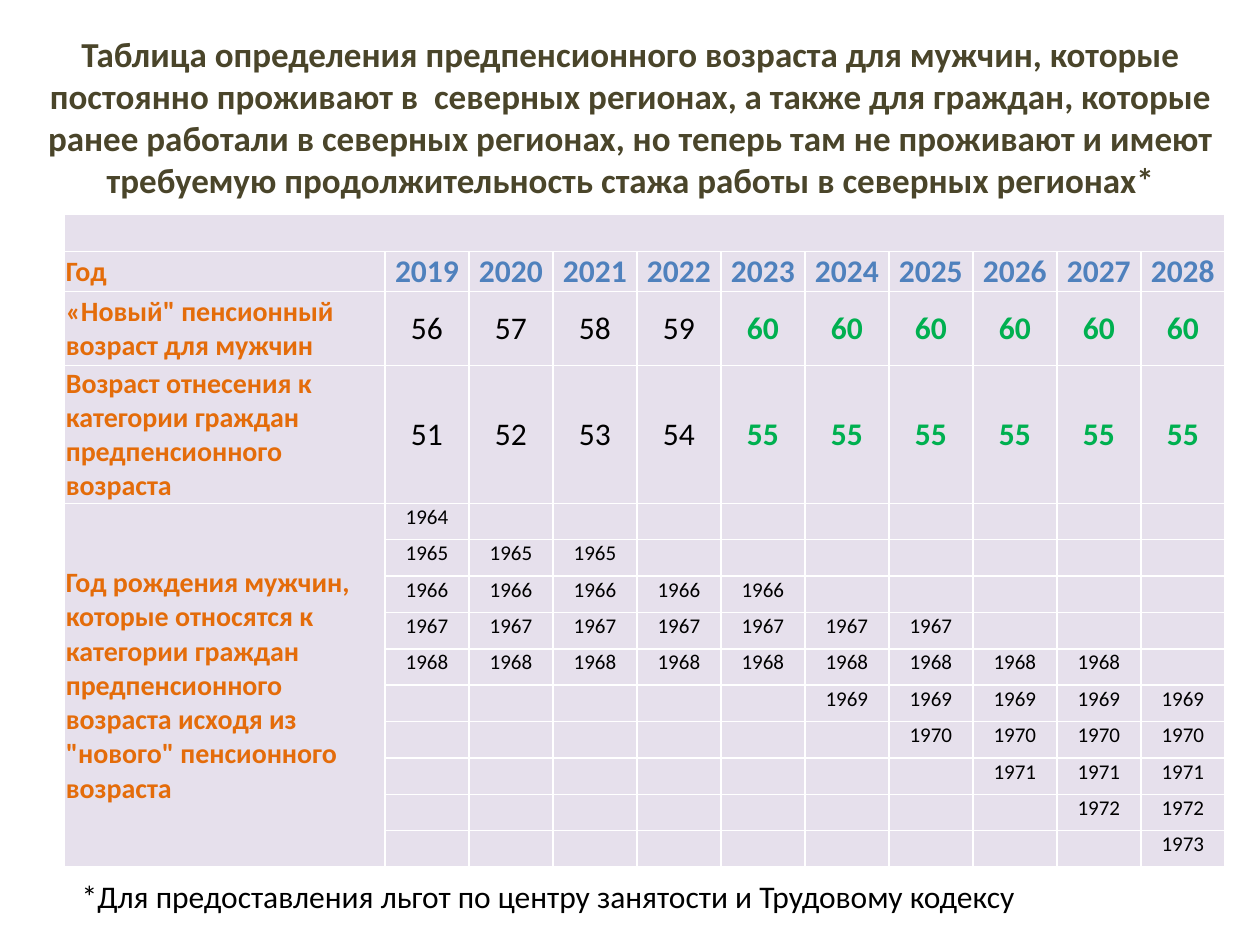
from lxml.etree import SubElement
from pptx import Presentation
from pptx.dml.color import RGBColor as Rgb
from pptx.enum.text import MSO_ANCHOR as Anchor, PP_ALIGN as Align
from pptx.oxml.ns import qn
from pptx.util import Pt

# Content
TITLE = (
    "Таблица определения предпенсионного возраста для мужчин, которые "
    "постоянно проживают в  северных регионах, а также для граждан, которые "
    "ранее работали в северных регионах, но теперь там не проживают и имеют "
    "требуемую продолжительность стажа работы в северных регионах*"
)
FOOTNOTE = "*Для предоставления льгот по центру занятости и Трудовому кодексу"
YEARS = list(range(2019, 2029))
LABELS = [
    "Год",
    "«Новый\" пенсионный возраст для мужчин",
    "Возраст отнесения к категории граждан предпенсионного возраста",
    "Год рождения мужчин, которые относятся к категории граждан "
    "предпенсионного возраста исходя из \"нового\" пенсионного возраста",
]
AGES = [
    [56, 57, 58, 59] + [60] * 6,
    [51, 52, 53, 54] + [55] * 6,
]
FINAL_AGE_YEAR = 2023
# Birth year: first and last calendar year in which it counts
BIRTH_YEARS = {
    1964: (2019, 2019), 1965: (2019, 2021), 1966: (2019, 2023),
    1967: (2019, 2025), 1968: (2019, 2027), 1969: (2024, 2028),
    1970: (2025, 2028), 1971: (2026, 2028), 1972: (2027, 2028),
    1973: (2028, 2028),
}

# Theme
FONT = "Calibri"
CELL_FILL, BORDER = "E6E0EC", "FFFFFF"
THEME = {
    "title": {"size": 20, "bold": True, "color": "4A452A"},
    "label": {"size": 16, "bold": True, "color": "E46C0A"},
    "year": {"size": 18, "bold": True, "color": "4F81BD"},
    "age": {"size": 18, "bold": False, "color": "000000"},
    "final_age": {"size": 18, "bold": True, "color": "00B050"},
    "birth": {"size": 12, "bold": False, "color": "000000"},
    "footnote": {"size": 18, "bold": False, "color": "000000"},
}

# Layout in points
TITLE_BOX = (14.4, 21.6, 692, 90)
TABLE_AT = (37, 122.6)
FOOTNOTE_BOX = (39.6, 497.5, 646.5, 29)
COLUMNS = [183] + [48] * len(YEARS)
ROWS = [21.2, 22.8, 42.2, 78.9] + [20.8] * len(BIRTH_YEARS)
FIRST_BIRTH_ROW = 4
CELL_MARGINS = {"margin_left": 0.7, "margin_top": 0.7,
                "margin_right": 0.7, "margin_bottom": 0}


def write(frame, text, style, align=Align.LEFT):
    para = frame.paragraphs[0]
    para.alignment = align
    span = para.add_run()
    span.text = str(text)
    look = THEME[style]
    values = {"name": FONT, "size": Pt(look["size"]), "bold": look["bold"]}
    for name, value in values.items():
        setattr(span.font, name, value)
    span.font.color.rgb = Rgb.from_string(look["color"])


def add_text(page, place, text, style, align, anchor):
    box = page.shapes.add_textbox(*map(Pt, place))
    box.text_frame.word_wrap = True
    box.text_frame.vertical_anchor = anchor
    write(box.text_frame, text, style, align)


def format_cell(cell):
    for name, value in CELL_MARGINS.items():
        setattr(cell, name, Pt(value))
    properties = cell._tc.get_or_add_tcPr()
    for side in ("a:lnL", "a:lnR", "a:lnT", "a:lnB"):
        line = SubElement(properties, qn(side), w=str(Pt(1)))
        SubElement(SubElement(line, qn("a:solidFill")), qn("a:srgbClr"), val=BORDER)
    cell.fill.solid()
    cell.fill.fore_color.rgb = Rgb.from_string(CELL_FILL)
    # Keeps empty cells from stretching their row
    SubElement(cell.text_frame.paragraphs[0]._p, qn("a:endParaRPr"), sz="1200")


def fill_cell(cell, text, style, align=Align.CENTER, anchor=Anchor.MIDDLE):
    cell.vertical_anchor = anchor
    write(cell.text_frame, text, style, align)


def add_age_table(page):
    frame = page.shapes.add_table(len(ROWS), len(COLUMNS), *map(Pt, TABLE_AT),
                                  Pt(sum(COLUMNS)), Pt(sum(ROWS)))
    table = frame.table
    table.first_row = table.horz_banding = False
    for column, width in zip(table.columns, COLUMNS):
        column.width = Pt(width)
    for row, height in zip(table.rows, ROWS):
        row.height = Pt(height)
    for cell in table.iter_cells():
        format_cell(cell)

    # Empty band on top, and one label beside all birth years
    table.cell(0, 0).merge(table.cell(0, len(YEARS)))
    table.cell(FIRST_BIRTH_ROW, 0).merge(table.cell(len(ROWS) - 1, 0))

    for row, label in enumerate(LABELS, 1):
        fill_cell(table.cell(row, 0), label, "label", Align.LEFT)
    for column, year in enumerate(YEARS, 1):
        fill_cell(table.cell(1, column), year, "year")
        age_style = "final_age" if year >= FINAL_AGE_YEAR else "age"
        for row, ages in enumerate(AGES, 2):
            fill_cell(table.cell(row, column), ages[column - 1], age_style)
        for row, (birth, (first, last)) in enumerate(BIRTH_YEARS.items(), FIRST_BIRTH_ROW):
            if first <= year <= last:
                fill_cell(table.cell(row, column), birth, "birth", anchor=Anchor.TOP)


def main():
    deck = Presentation()
    deck.slide_width, deck.slide_height = Pt(720), Pt(540)
    page = deck.slides.add_slide(deck.slide_layouts[6])
    add_text(page, TITLE_BOX, TITLE, "title", Align.CENTER, Anchor.MIDDLE)
    add_age_table(page)
    add_text(page, FOOTNOTE_BOX, FOOTNOTE, "footnote", Align.LEFT, Anchor.TOP)
    deck.save("out.pptx")


if __name__ == "__main__":
    main()
